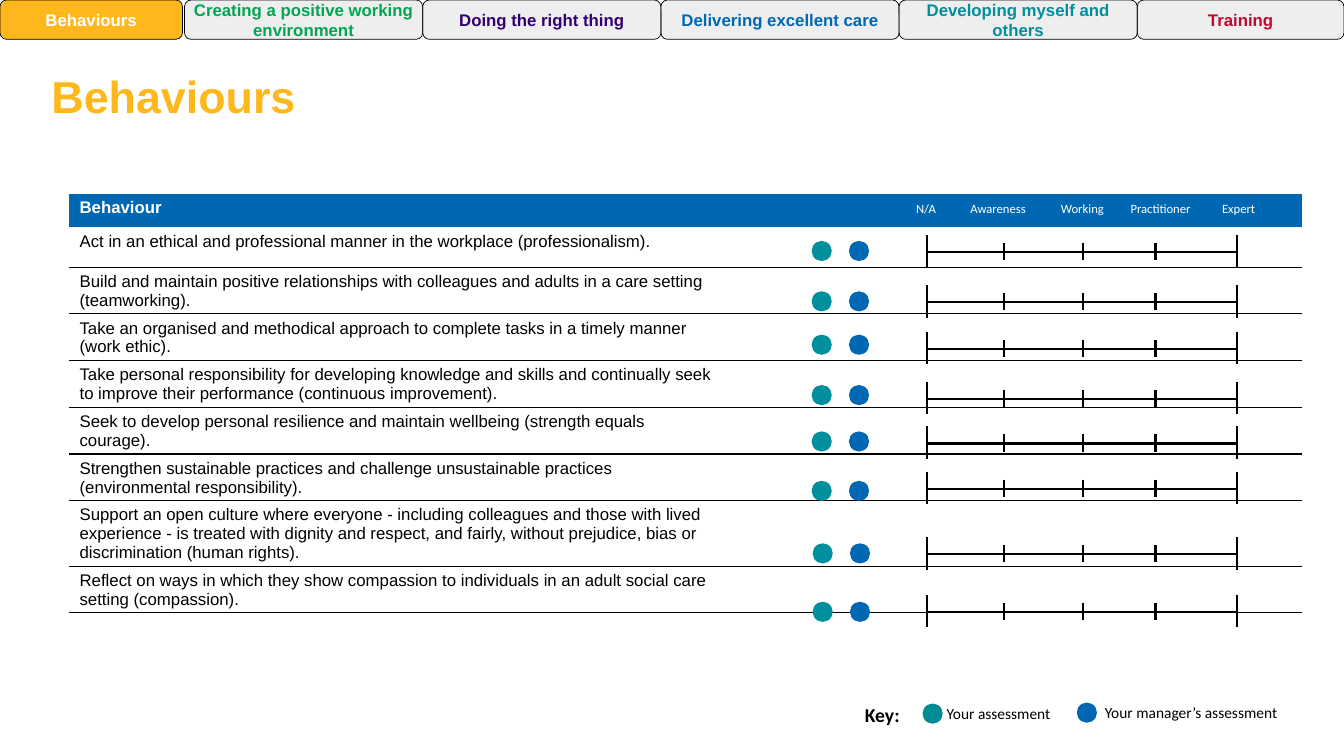
from lxml import etree
from pptx import Presentation
from pptx.dml import color
from pptx.enum import shapes, text
from pptx.oxml import ns
from pptx.util import Inches, Pt

# Content
BLACK, WHITE, BLUE, TEAL, AMBER = "000000", "FFFFFF", "0068B3", "008F9C", "FFB81C"
KEY_TEAL, TAB_GREY = "008C95", "CACACA"
TITLE = "Behaviours"
TABS = [
    ("Behaviours", WHITE),
    ("Creating a positive working environment", "00A651"),
    ("Doing the right thing", "330072"),
    ("Delivering excellent care", BLUE),
    ("Developing myself and others", TEAL),
    ("Training", "BA0C2F"),
]
LEVELS = ["N/A", "Awareness", "Working", "Practitioner", "Expert"]
# Behaviour, row height, height of its scale line, top of its dots
BEHAVIOURS = [
    ("Act in an ethical and professional manner in the workplace (professionalism).",
     0.4, 2.5, 2.39),
    ("Build and maintain positive relationships with colleagues and adults in a care "
     "setting (teamworking).", 0.45, 3, 2.89),
    ("Take an organised and methodical approach to complete tasks in a timely manner "
     "(work ethic).", 0.45, 3.46, 3.32),
    ("Take personal responsibility for developing knowledge and skills and continually "
     "seek to improve their performance (continuous improvement).", 0.45, 3.96, 3.82),
    ("Seek to develop personal resilience and maintain wellbeing (strength equals courage).",
     0.45, 4.4, 4.28),
    ("Strengthen sustainable practices and challenge unsustainable practices "
     "(environmental responsibility).", 0.4, 4.85, 4.77),
    ("Support an open culture where everyone - including colleagues and those with lived "
     "experience - is treated with dignity and respect, and fairly, without prejudice, "
     "bias or discrimination (human rights).", 0.63, 5.5, 5.39),
    ("Reflect on ways in which they show compassion to individuals in an adult social care "
     "setting (compassion).", 0.45, 6.07, 5.97),
]
# Text, left, top, width, size, bold
KEY_TEXTS = [
    ("Key:", 8.48, 6.92, 0.67, 14, True),
    ("Your assessment", 9.29, 6.94, 2, 11, False),
    ("Your manager’s assessment", 10.86, 6.93, 2.31, 11, False),
]
KEY_DOTS = [(9.15, 6.98, KEY_TEAL), (10.68, 6.97, BLUE)]

# Grid
SLIDE_WIDTH, SLIDE_HEIGHT = 13.33, 7.5
TAB_EDGES = [1.83 + (11.28 - 1.83) / 4 * i for i in range(5)]
TAB_LEFTS = [0] + TAB_EDGES
TAB_RIGHTS = [1.81] + TAB_EDGES[1:] + [SLIDE_WIDTH]
TAB_HEIGHT = 0.39
TABLE_LEFT, TABLE_TOP, TABLE_COLUMNS, HEADER_HEIGHT = 0.68, 1.92, (6.58, 5.65), 0.33
LEVEL_LEFT, LEVEL_STEP, LEVEL_WIDTH = 8.75, 0.775, 0.87
TICKS = [9.19, 9.96, 10.74, 11.46, 12.27]
DOT_SIZE, DOT_COLUMNS = 0.2, ((8.05, TEAL), (8.42, BLUE))


def rgb(value):
    return color.RGBColor.from_string(value)


def write(frame, content, size, font, ink, bold=False, align=text.PP_ALIGN.LEFT):
    paragraph = frame.paragraphs[0]
    paragraph.alignment = align
    run = paragraph.add_run()
    run.text = content
    run.font.size, run.font.name, run.font.bold = Pt(size), font, bold
    run.font.color.rgb = rgb(ink)


def set_margins(target, left, top, right, bottom):
    target.margin_left, target.margin_top = Inches(left), Inches(top)
    target.margin_right, target.margin_bottom = Inches(right), Inches(bottom)


def add_label(slide, content, left, top, width, height, size, ink, **options):
    box = slide.shapes.add_textbox(*map(Inches, (left, top, width, height)))
    box.text_frame.word_wrap = True
    write(box.text_frame, content, size, "Calibri", ink, **options)


def add_dot(slide, left, top, fill):
    dot = slide.shapes.add_shape(shapes.MSO_SHAPE.OVAL, Inches(left), Inches(top),
                                 Inches(DOT_SIZE), Inches(DOT_SIZE))
    dot.shadow.inherit = False
    dot.fill.solid()
    dot.fill.fore_color.rgb = rgb(fill)
    dot.line.fill.background()


def add_line(group, x1, y1, x2, y2):
    line = group.shapes.add_connector(shapes.MSO_CONNECTOR.STRAIGHT,
                                      *map(Inches, (x1, y1, x2, y2)))
    line.line.width = Pt(1.5)
    line.line.color.rgb = rgb(BLACK)
    etree.SubElement(line._element.spPr, ns.qn("a:effectLst"))


def add_scale(slide, y):
    group = slide.shapes.add_group_shape()
    add_line(group, TICKS[0], y, TICKS[-1], y)
    for x in TICKS:
        above, below = (0.17, 0.15) if x in (TICKS[0], TICKS[-1]) else (0.09, 0.08)
        add_line(group, x, y - above, x, y + below)


def add_tab(slide, index, content, ink):
    left = TAB_LEFTS[index]
    tab = slide.shapes.add_shape(
        shapes.MSO_SHAPE.ROUNDED_RECTANGLE, Inches(left), 0,
        Inches(TAB_RIGHTS[index] - left), Inches(TAB_HEIGHT))
    tab.shadow.inherit = False
    tab.fill.solid()
    tab.fill.fore_color.rgb = rgb(AMBER if index == 0 else TAB_GREY)
    if index:
        fill = tab._element.spPr.find(".//" + ns.qn("a:srgbClr"))
        etree.SubElement(fill, ns.qn("a:alpha"), val="30000")
    tab.line.width = Pt(0.5)
    tab.line.color.rgb = rgb(BLACK)
    frame = tab.text_frame
    frame.word_wrap = True
    frame.vertical_anchor = text.MSO_ANCHOR.MIDDLE
    set_margins(frame, 0, 0.05, 0, 0.05)
    write(frame, content, 12, "Arial", ink, True, text.PP_ALIGN.CENTER)


def add_bottom_border(cell):
    border = etree.Element(ns.qn("a:lnB"), w=str(Pt(1)))
    fill = etree.SubElement(border, ns.qn("a:solidFill"))
    etree.SubElement(fill, ns.qn("a:srgbClr"), val=BLACK)
    cell._tc.get_or_add_tcPr().insert(0, border)


def add_behaviour_table(slide):
    rows = [("Behaviour", HEADER_HEIGHT)] + [row[:2] for row in BEHAVIOURS]
    table = slide.shapes.add_table(
        len(rows), 2, Inches(TABLE_LEFT), Inches(TABLE_TOP), Inches(sum(TABLE_COLUMNS)),
        Inches(sum(height for _, height in rows))).table
    table.horz_banding = False
    # Plain style without grid
    style = table._tbl.tblPr.find(ns.qn("a:tableStyleId"))
    style.text = "{2D5ABB26-0587-4C30-8999-92F81FD0307C}"
    for column, width in zip(table.columns, TABLE_COLUMNS):
        column.width = Inches(width)
    for index, (content, height) in enumerate(rows):
        table.rows[index].height = Inches(height)
        for cell in table.rows[index].cells:
            set_margins(cell, 0.11, 0.05, 0.11, 0.04)
            if index == 0:
                cell.fill.solid()
                cell.fill.fore_color.rgb = rgb(BLUE)
            else:
                cell.fill.background()
                add_bottom_border(cell)
        name_cell, scale_cell = table.rows[index].cells
        write(name_cell.text_frame, content, 12, "Arial",
              BLACK if index else WHITE, index == 0)
        empty = scale_cell.text_frame.paragraphs[0]._p
        etree.SubElement(empty, ns.qn("a:endParaRPr"), sz="1200")


def main():
    presentation = Presentation()
    presentation.slide_width = Inches(SLIDE_WIDTH)
    presentation.slide_height = Inches(SLIDE_HEIGHT)
    slide = presentation.slides.add_slide(presentation.slide_layouts[5])

    # Title
    title = slide.shapes.title
    title.left, title.top, title.width, title.height = map(Inches, (0.41, 0.58, 2.89, 0.69))
    frame = title.text_frame
    frame.word_wrap = False
    frame.auto_size = text.MSO_AUTO_SIZE.NONE
    frame.vertical_anchor = text.MSO_ANCHOR.TOP
    set_margins(frame, 0.1, 0.1, 0.1, 0.1)
    write(frame, TITLE, 32, "Arial", AMBER, True)

    # Navigation tabs
    for index, (content, ink) in enumerate(TABS):
        add_tab(slide, index, content, ink)

    # Table with level headings
    add_behaviour_table(slide)
    for index, level in enumerate(LEVELS):
        align = text.PP_ALIGN.LEFT if level == "Awareness" else text.PP_ALIGN.CENTER
        add_label(slide, level, LEVEL_LEFT + LEVEL_STEP * index, 1.94, LEVEL_WIDTH, 0.25,
                  9, WHITE, align=align)

    # Dots and scale of each behaviour
    for index, (_, _, scale_y, dot_top) in enumerate(BEHAVIOURS):
        add_scale(slide, scale_y)
        shift = 0.01 if index >= 6 else 0
        for left, fill in DOT_COLUMNS:
            add_dot(slide, left + shift, dot_top, fill)

    # Key
    for left, top, fill in KEY_DOTS:
        add_dot(slide, left, top, fill)
    for content, left, top, width, size, bold in KEY_TEXTS:
        add_label(slide, content, left, top, width, 0.3, size, BLACK, bold=bold)

    presentation.save("out.pptx")


if __name__ == "__main__":
    main()
